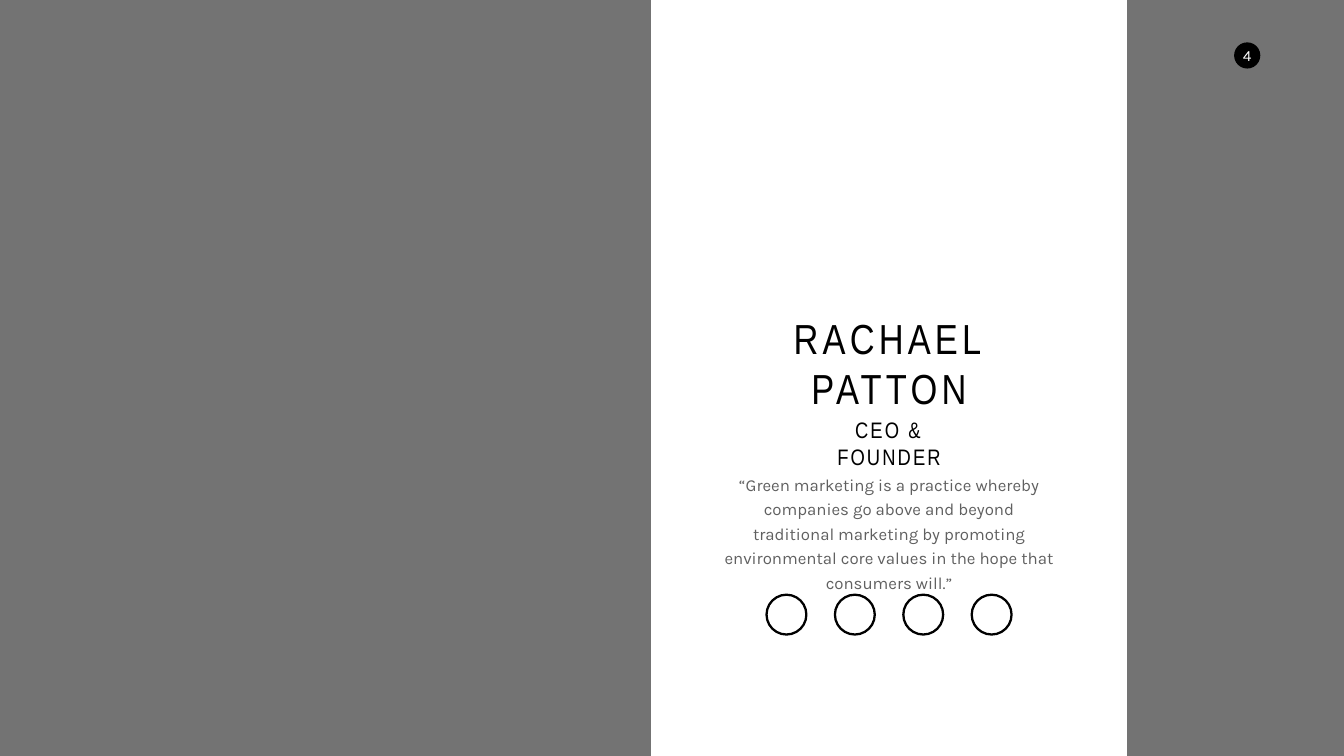
from lxml import etree
from pptx import Presentation
from pptx.dml.color import RGBColor
from pptx.enum.shapes import MSO_SHAPE
from pptx.enum.text import MSO_ANCHOR, MSO_AUTO_SIZE, PP_ALIGN
from pptx.oxml.ns import qn
from pptx.util import Inches, Pt

RECT, OVAL = MSO_SHAPE.RECTANGLE, MSO_SHAPE.OVAL
TOP, MIDDLE, BOTTOM = MSO_ANCHOR.TOP, MSO_ANCHOR.MIDDLE, MSO_ANCHOR.BOTTOM
GROW, CENTER = MSO_AUTO_SIZE.SHAPE_TO_FIT_TEXT, PP_ALIGN.CENTER

BLACK = RGBColor(0x00, 0x00, 0x00)
WHITE = RGBColor(0xFF, 0xFF, 0xFF)
GRAY = RGBColor(0x60, 0x60, 0x60)
HEAD, BODY = "Arial Narrow", "Karla"
WIDTH, HEIGHT = 26.66, 15


def add_shape(slide, kind, box):
    """Add a black shape with neither line nor shadow."""
    shape = slide.shapes.add_shape(kind, *map(Inches, box))
    shape.shadow.inherit = False
    shape.fill.solid()
    shape.fill.fore_color.rgb = BLACK
    shape.line.fill.background()
    return shape


def set_text(frame, text, size, face, color, space=0):
    """Write one centred paragraph, with letter spacing in points."""
    para = frame.paragraphs[0]
    para.alignment = CENTER
    para.font.size = Pt(size)
    para.font.name = face
    para.font.color.rgb = color
    run = para.add_run()
    run.text = text
    if space:
        run._r.get_or_add_rPr().set("spc", str(space * 100))
    return para


def add_text(slide, box, anchor, *style):
    """Add a wrapped text box that grows from its anchor."""
    frame = slide.shapes.add_textbox(*map(Inches, box)).text_frame
    frame.word_wrap = True
    frame.auto_size = GROW
    frame.vertical_anchor = anchor
    return set_text(frame, *style)


def add_badge(slide, box, text):
    """Draw the round page number."""
    frame = add_shape(slide, OVAL, box).text_frame
    frame.margin_left = frame.margin_right = 0
    frame.margin_top = frame.margin_bottom = 0
    frame.word_wrap = False
    frame.vertical_anchor = MIDDLE
    set_text(frame, text, 22, BODY, WHITE)


def add_shade(slide, box):
    """Draw a translucent black panel."""
    shade = add_shape(slide, RECT, box)
    color = shade.fill._xPr.find(qn("a:solidFill"))[0]
    etree.SubElement(color, qn("a:alpha"), val="55000")


def add_rings(slide, box, count):
    """Spread plain rings evenly over the box."""
    left, top, width, size = box
    step = (width - size) / (count - 1)
    for i in range(count):
        ring = add_shape(slide, OVAL, (left + i * step, top, size, size))
        ring.fill.background()
        ring.line.color.rgb = BLACK
        ring.line.width = Pt(3.25)


def add_profile(slide, box):
    """Stack name, role, quote and rings about the middle of the box."""
    left, top, width, _ = box
    mid = left + width / 2

    def place(y, w, h):
        """Centre a box of the given size at height y."""
        return mid - w / 2, top + y, w, h

    add_text(slide, place(7.13, 7.28, 1.11), BOTTOM,
             "RACHAEL PATTON", 60, HEAD, BLACK, 6)
    add_text(slide, place(8.47, 3.37, 0.64), MIDDLE,
             "CEO & FOUNDER", 32, HEAD, BLACK, 3)
    quote = add_text(
        slide, place(9.28, 6.76, 2.03), TOP,
        "“Green marketing is a practice whereby companies go above and "
        "beyond traditional marketing by promoting environmental core "
        "values in the hope that consumers will.”", 24, BODY, GRAY)
    quote.line_spacing = Pt(35)
    quote.space_before = Pt(4.8)
    add_rings(slide, place(11.8, 4.86, 0.79), 4)


def main():
    """Build and save the slide."""
    deck = Presentation()
    deck.slide_width, deck.slide_height = Inches(WIDTH), Inches(HEIGHT)
    slide = deck.slides.add_slide(deck.slide_layouts[6])
    start, end = 12.91, 22.36
    add_shade(slide, (end, 0, WIDTH - end, HEIGHT))
    add_shade(slide, (0, 0, start, HEIGHT))
    add_badge(slide, (24.48, 0.84, 0.52, 0.52), "4")
    add_profile(slide, (start, 0, end - start, HEIGHT))
    deck.save("out.pptx")


if __name__ == "__main__":
    main()
